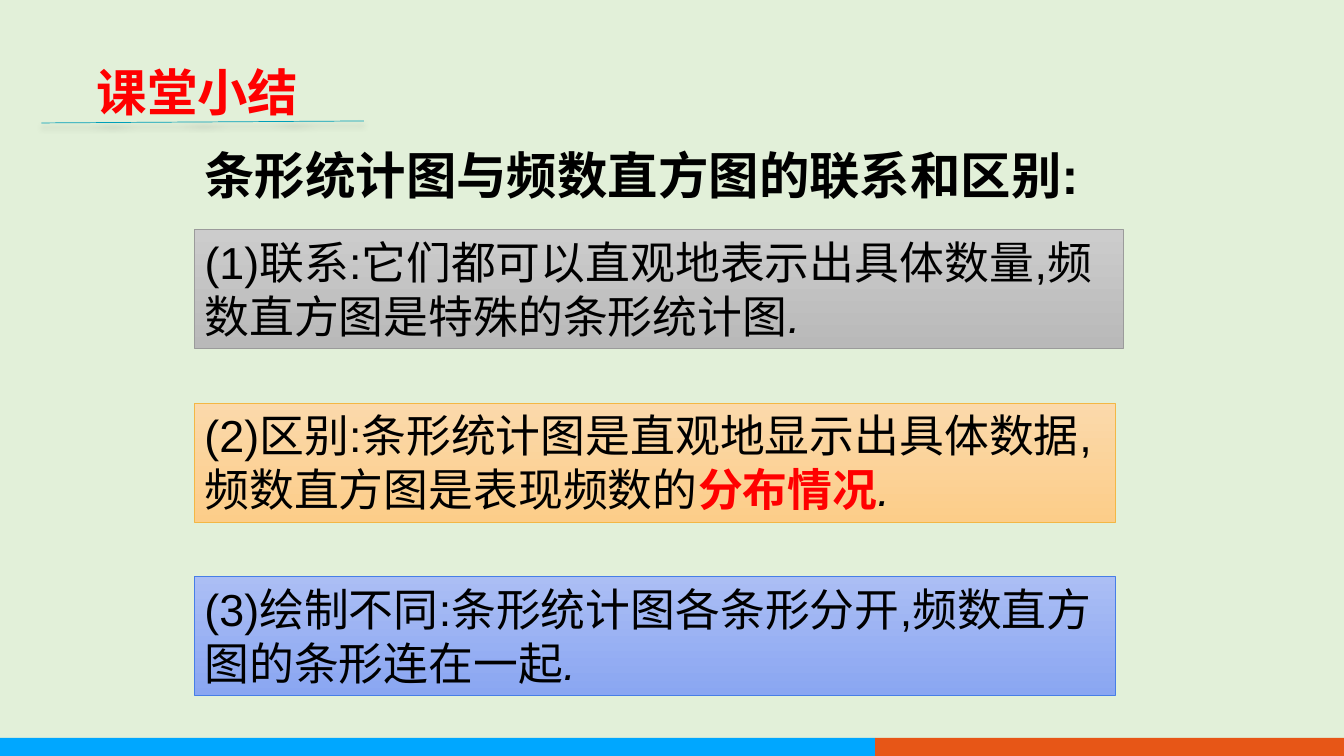
"""Build the class summary slide comparing bar charts and frequency histograms."""
from lxml import etree
from pptx import Presentation
from pptx.dml.color import RGBColor
from pptx.enum.shapes import MSO_CONNECTOR, MSO_SHAPE
from pptx.enum.text import MSO_ANCHOR, MSO_AUTO_SIZE, PP_ALIGN
from pptx.oxml import parse_xml
from pptx.oxml.ns import nsdecls, qn
from pptx.util import Inches, Pt

BLACK = RGBColor(0x00, 0x00, 0x00)
RED = RGBColor(0xFF, 0x00, 0x00)
PALE_GREEN = RGBColor(0xE2, 0xF0, 0xD9)
BLUE = RGBColor(0x00, 0xA7, 0xFF)
ORANGE = RGBColor(0xE7, 0x56, 0x17)
TEAL = RGBColor(0x00, 0x9F, 0xB9)
GRAY_FILL = RGBColor(0xCC, 0xCC, 0xCC), RGBColor(0xB9, 0xB9, 0xB9)
GRAY_LINE = RGBColor(0x9B, 0x9B, 0x9B)
AMBER_FILL = RGBColor(0xFB, 0xD9, 0xAB), RGBColor(0xFC, 0xCD, 0x89)
AMBER_LINE = RGBColor(0xF3, 0xB7, 0x45)
BLUE_FILL = RGBColor(0xAB, 0xBE, 0xF4), RGBColor(0x8A, 0xA6, 0xF2)
BLUE_LINE = RGBColor(0x47, 0x7E, 0xE7)
CJK = "Noto Sans CJK SC"


def add_run(p, text, size, color=BLACK, bold=False, italic=False, font="Arial"):
    r = p.add_run()
    r.text = text
    r.font.size = Pt(size)
    r.font.bold = bold
    r.font.italic = italic
    r.font.name = font
    r.font.color.rgb = color
    etree.SubElement(r.font._element, qn("a:ea")).set("typeface", CJK)


prs = Presentation()
prs.slide_width, prs.slide_height = Inches(13.33), Inches(7.5)
s = prs.slides.add_slide(prs.slide_layouts[6])
s.background.fill.solid()
s.background.fill.fore_color.rgb = PALE_GREEN

for left, width, color in [(0, 8.68, BLUE), (8.68, 4.65, ORANGE)]:
    sp = s.shapes.add_shape(MSO_SHAPE.RECTANGLE, Inches(left), Inches(7.32), Inches(width), Inches(0.18))
    sp.shadow.inherit = False
    sp.fill.solid()
    sp.fill.fore_color.rgb = color
    sp.line.fill.background()

headings = [
    ("课堂小结", 0.86, 0.56, 2.22, RED, CJK, False),
    ("条形统计图与频数直方图的联系和区别:", 1.93, 1.38, 8.98, BLACK, "Arial", True),
]
for text, left, top, width, color, font, wrap in headings:
    sp = s.shapes.add_textbox(Inches(left), Inches(top), Inches(width), Inches(0.71))
    tf = sp.text_frame
    tf.word_wrap = wrap
    tf.auto_size = MSO_AUTO_SIZE.SHAPE_TO_FIT_TEXT
    add_run(tf.paragraphs[0], text, 36, color, bold=True, font=font)

points = [
    ("(1)联系:它们都可以直观地表示出具体数量,频数直方图是特殊的条形统计图", "", 2.28, 9.21, GRAY_FILL, GRAY_LINE),
    ("(2)区别:条形统计图是直观地显示出具体数据,频数直方图是表现频数的", "分布情况", 4, 9.13, AMBER_FILL, AMBER_LINE),
    ("(3)绘制不同:条形统计图各条形分开,频数直方图的条形连在一起", "", 5.72, 9.13, BLUE_FILL, BLUE_LINE),
]
for text, emphasis, top, width, fill, line in points:
    sp = s.shapes.add_shape(MSO_SHAPE.RECTANGLE, Inches(1.93), Inches(top), Inches(width), Inches(1.18))
    sp.shadow.inherit = False
    sp.fill.gradient()
    sp.fill.gradient_angle = 270
    for stop, color in zip(sp.fill.gradient_stops, fill):
        stop.color.rgb = color
    sp.line.color.rgb = line
    sp.line.width = Pt(0.5)
    tf = sp.text_frame
    tf.word_wrap = True
    tf.auto_size = MSO_AUTO_SIZE.SHAPE_TO_FIT_TEXT
    tf.vertical_anchor = MSO_ANCHOR.TOP
    p = tf.paragraphs[0]
    p.alignment = PP_ALIGN.LEFT
    add_run(p, text, 32)
    if emphasis:
        add_run(p, emphasis, 32, RED, bold=True)
    add_run(p, ".", 32, italic=True)

underline = s.shapes.add_connector(MSO_CONNECTOR.STRAIGHT, Inches(0.41), Inches(1.22), Inches(3.61), Inches(1.2))
underline.line.color.rgb = TEAL
underline.line.width = Pt(0.5)
underline._element.spPr.append(parse_xml(
    f'<a:effectLst {nsdecls("a")}><a:outerShdw blurRad="{Pt(4)}" dist="{Pt(3)}" dir="5400000" rotWithShape="0">'
    '<a:srgbClr val="000000"><a:alpha val="40000"/></a:srgbClr></a:outerShdw></a:effectLst>'))

prs.save("out.pptx")
